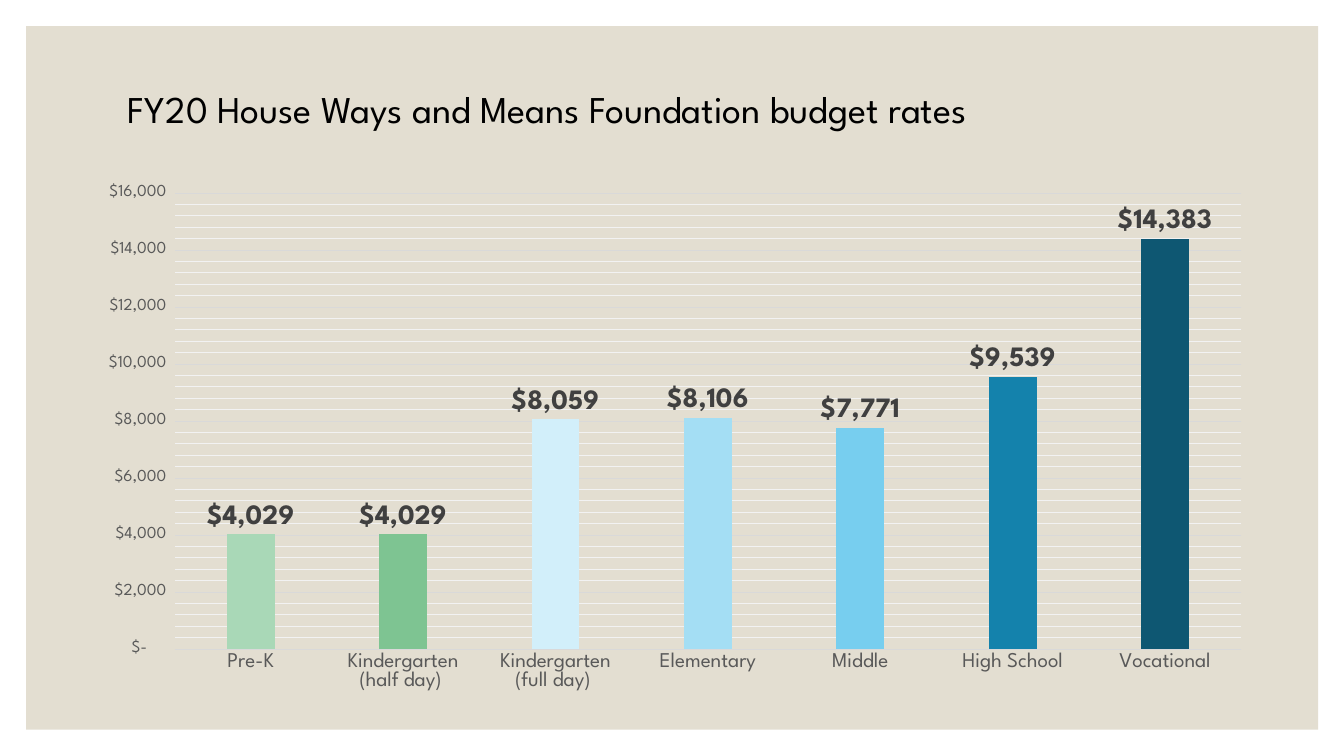
import copy
from dataclasses import dataclass
from typing import Any

import lxml.etree
import pptx
import pptx.chart.data
import pptx.dml.color
import pptx.enum.chart
import pptx.enum.shapes
import pptx.enum.text
import pptx.oxml.ns
import pptx.util

Cm = pptx.util.Cm
Pt = pptx.util.Pt
RGBColor = pptx.dml.color.RGBColor
qn = pptx.oxml.ns.qn

FONT = "League Spartan"
DOLLARS = '_("$"* #,##0_);_("$"* \\(#,##0\\);_("$"* "-"??_);_(@_)'
SAND = RGBColor(0xE3, 0xDE, 0xD1)
BLACK = RGBColor(0x00, 0x00, 0x00)
DARK_GREY = RGBColor(0x40, 0x40, 0x40)
MID_GREY = RGBColor(0x59, 0x59, 0x59)
MAJOR_GREY = RGBColor(0xD9, 0xD9, 0xD9)
MINOR_GREY = RGBColor(0xF2, 0xF2, 0xF2)
SERIES_BLUE = RGBColor(0x1C, 0xAD, 0xE4)


@dataclass(frozen=True)
class Box:
    left: float
    top: float
    width: float
    height: float

    def lengths(self) -> tuple:
        return Cm(self.left), Cm(self.top), Cm(self.width), Cm(self.height)


@dataclass(frozen=True)
class Rate:
    level: str
    dollars: int
    color: RGBColor


RATES = [
    Rate("Pre-K", 4029, RGBColor(0xA9, 0xD8, 0xB7)),
    Rate("Kindergarten (half day) ", 4029, RGBColor(0x7E, 0xC4, 0x92)),
    Rate("Kindergarten (full day) ", 8059, RGBColor(0xD2, 0xEF, 0xFA)),
    Rate("Elementary", 8106, RGBColor(0xA4, 0xDE, 0xF4)),
    Rate("Middle", 7771, RGBColor(0x77, 0xCE, 0xEF)),
    Rate("High School", 9539, RGBColor(0x14, 0x82, 0xAC)),
    Rate("Vocational", 14383, RGBColor(0x0E, 0x57, 0x72)),
]
PLATE = Box(0.66, 0.66, 32.56, 17.73)
TITLE = Box(2.97, 2.03, 27.94, 1.42)
CHART = Box(2.01, 4.47, 29.87, 13.21)
PLOT = {"x": 0.08, "y": 0.03, "w": 0.9, "h": 0.87}


def apply(obj: Any, values: dict) -> None:
    for name, value in values.items():
        setattr(obj, name, value)


def set_font(font: Any, size: int, color: RGBColor, bold: bool = False) -> None:
    apply(font, {"name": FONT, "size": Pt(size), "bold": bold})
    font.color.rgb = color


def set_line(line: Any, color: RGBColor) -> None:
    line.color.rgb = color
    line.width = Pt(0.75)


def add_title(s: Any, text: str) -> Any:
    sp = s.shapes.title
    apply(sp, dict(zip(("left", "top", "width", "height"), TITLE.lengths())))
    tf = sp.text_frame
    apply(tf, {
        "text": text,
        "word_wrap": True,
        "auto_size": pptx.enum.text.MSO_AUTO_SIZE.SHAPE_TO_FIT_TEXT,
        "vertical_anchor": pptx.enum.text.MSO_ANCHOR.MIDDLE,
    })
    p = tf.paragraphs[0]
    p.alignment = pptx.enum.text.PP_ALIGN.LEFT
    set_font(p.runs[0].font, 27, BLACK)
    return sp


def add_plate(s: Any, title: Any) -> None:
    sp = s.shapes.add_shape(pptx.enum.shapes.MSO_SHAPE.RECTANGLE, *PLATE.lengths())
    sp.shadow.inherit = False
    sp.fill.solid()
    sp.fill.fore_color.rgb = SAND
    sp.line.fill.background()
    title.element.addprevious(sp.element)


def place_plot(chart: Any) -> None:
    area = chart.element.find(".//" + qn("c:plotArea"))
    for old in area.findall(qn("c:layout")):
        area.remove(old)
    layout = lxml.etree.SubElement(area, qn("c:layout"))
    area.insert(0, layout)
    manual = lxml.etree.SubElement(layout, qn("c:manualLayout"))
    settings = {"layoutTarget": "inner", "xMode": "edge", "yMode": "edge", **PLOT}
    for tag, value in settings.items():
        lxml.etree.SubElement(manual, qn("c:" + tag)).set("val", str(value))


def format_gridlines(chart: Any) -> None:
    set_line(chart.value_axis.major_gridlines.format.line, MAJOR_GREY)
    val_ax = chart.element.find(".//" + qn("c:valAx"))
    major = val_ax.find(qn("c:majorGridlines"))
    minor = val_ax.find(qn("c:minorGridlines"))
    minor.append(copy.deepcopy(major.find(qn("c:spPr"))))
    minor.find(".//" + qn("a:srgbClr")).set("val", str(MINOR_GREY))


def format_axes(chart: Any) -> None:
    none = pptx.enum.chart.XL_TICK_MARK.NONE
    for axis, size in ((chart.category_axis, 15), (chart.value_axis, 12)):
        apply(axis, {"major_tick_mark": none, "minor_tick_mark": none})
        set_font(axis.tick_labels.font, size, MID_GREY)
    set_line(chart.category_axis.format.line, MAJOR_GREY)
    axis = chart.value_axis
    apply(axis, {
        "minimum_scale": 0,
        "maximum_scale": 16000,
        "major_unit": 2000,
        "minor_unit": 400,
        "has_major_gridlines": True,
        "has_minor_gridlines": True,
    })
    axis.format.line.fill.background()
    apply(axis.tick_labels, {"number_format": DOLLARS, "number_format_is_linked": False})
    format_gridlines(chart)


def add_rates_chart(s: Any) -> None:
    data = pptx.chart.data.CategoryChartData(number_format=DOLLARS)
    data.categories = [rate.level for rate in RATES]
    data.add_series("Series 1", [rate.dollars for rate in RATES])
    kind = pptx.enum.chart.XL_CHART_TYPE.COLUMN_CLUSTERED
    chart = s.shapes.add_chart(kind, *CHART.lengths(), data).chart
    apply(chart, {"has_legend": False, "has_title": False})
    set_font(chart.font, 10, BLACK)
    place_plot(chart)
    format_axes(chart)

    plot = chart.plots[0]
    apply(plot, {"gap_width": 219, "overlap": -27, "vary_by_categories": False})
    series = plot.series[0]
    series.format.fill.solid()
    series.format.fill.fore_color.rgb = SERIES_BLUE
    for i, rate in enumerate(RATES):
        fill = series.points[i].format.fill
        fill.solid()
        fill.fore_color.rgb = rate.color
    labels = series.data_labels
    apply(labels, {
        "show_value": True,
        "position": pptx.enum.chart.XL_LABEL_POSITION.OUTSIDE_END,
        "number_format": DOLLARS,
        "number_format_is_linked": False,
    })
    set_font(labels.font, 20, DARK_GREY, bold=True)


def main() -> None:
    prs = pptx.Presentation()
    apply(prs, {"slide_width": Cm(33.87), "slide_height": Cm(19.05)})
    s = prs.slides.add_slide(prs.slide_layouts[5])
    title = add_title(s, "FY20 House Ways and Means Foundation budget rates")
    add_plate(s, title)
    add_rates_chart(s)
    prs.save("out.pptx")


if __name__ == "__main__":
    main()
